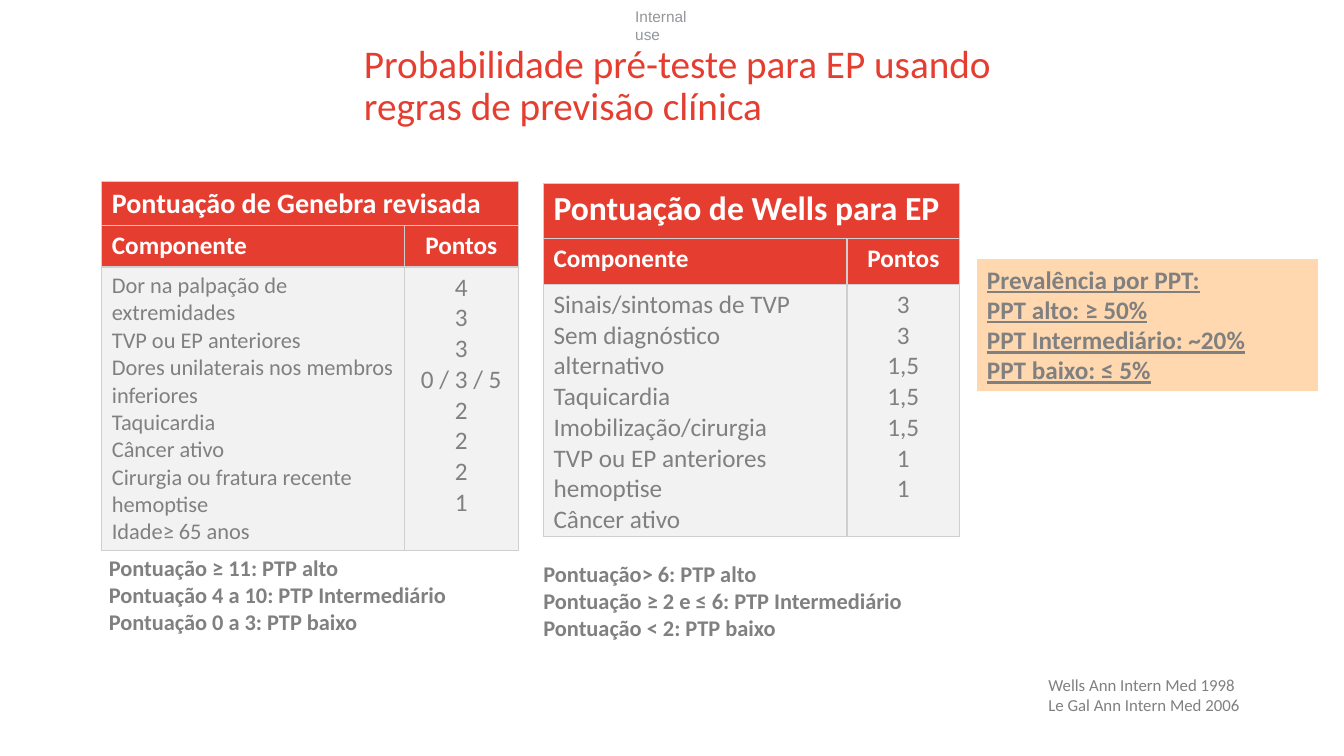
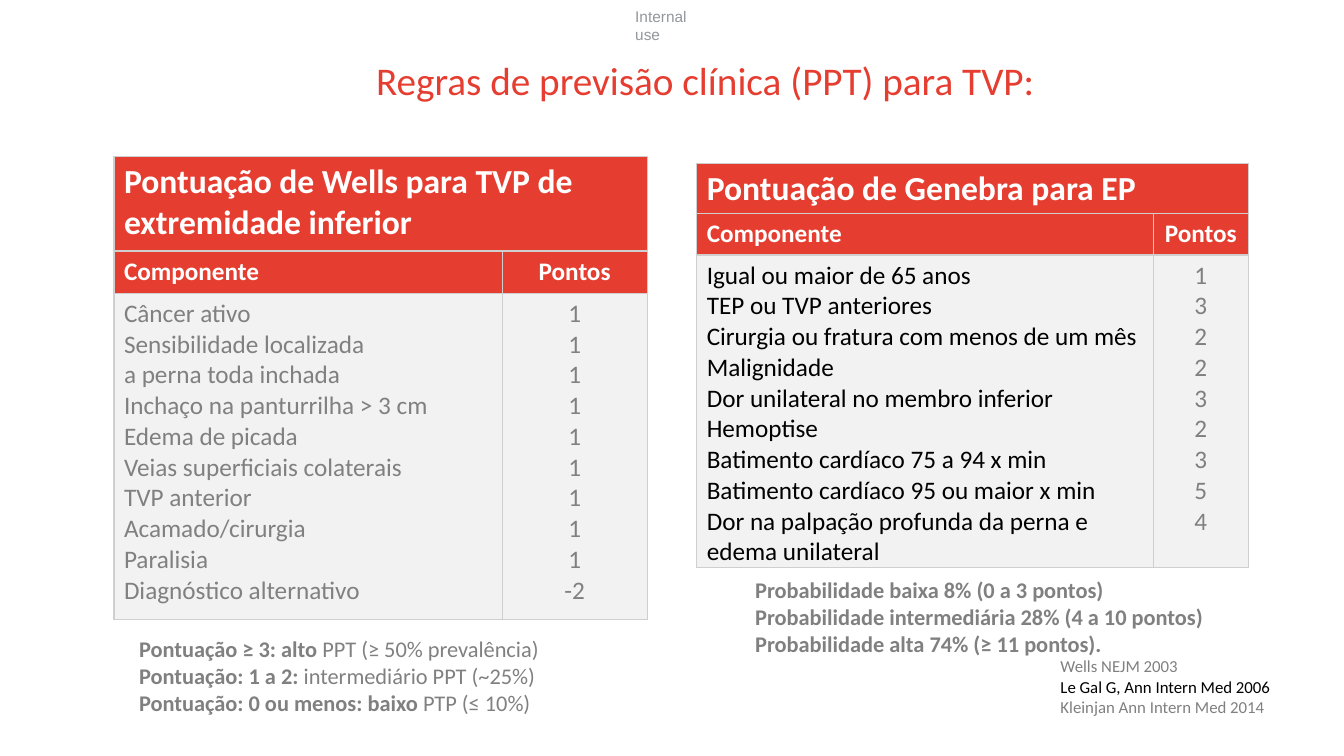
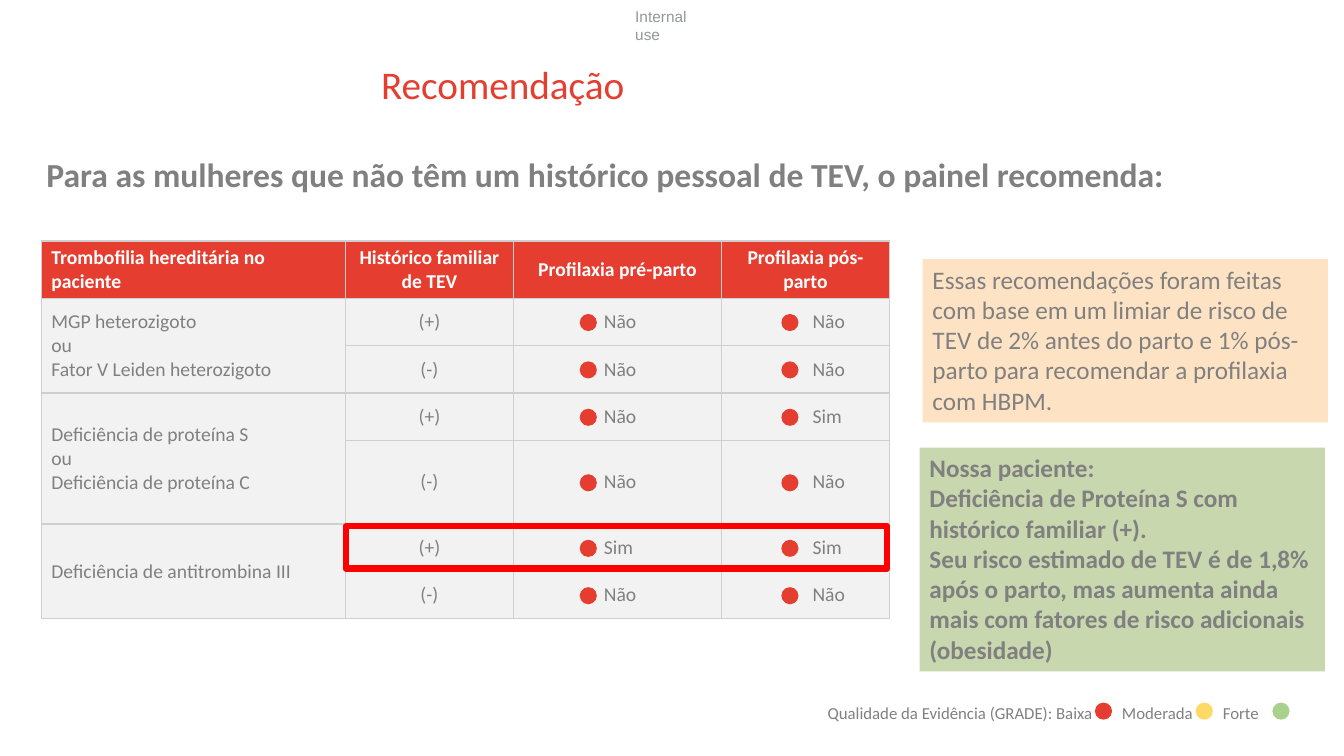
"""Builds three slides on clinical prediction rules and prophylaxis for venous thrombosis."""
from lxml.etree import SubElement
from pptx import Presentation
from pptx.dml.color import RGBColor as Rgb
from pptx.enum.shapes import MSO_SHAPE as Preset
from pptx.enum.text import MSO_ANCHOR as Anchor, PP_ALIGN as Align
from pptx.oxml.ns import qn
from pptx.util import Inches, Pt

COLORS = {
    "red": "E53E31", "frame": "FF0000", "gray": "808080", "label": "93979B",
    "white": "FFFFFF", "black": "000000", "cell": "F2F2F2", "border": "D0CECE",
    "orange": "FFD8B0", "peach": "FEE2C4", "sage": "C9D7AF",
    "yellow": "FFD966", "green": "A9D18E",
}
BASE_FONT = {"name": "Calibri", "size": 18, "bold": False, "color": "gray"}
HEADER = {"bold": True, "color": "white"}
NOTE = {"size": 16, "bold": True}
SOURCE = {"size": 12}
FLUSH = dict.fromkeys(("margin_left", "margin_top", "margin_right", "margin_bottom"), 0)
DOT = 0.17


def rgb(color):
    return Rgb.from_string(COLORS[color])


def style_span(span, formats):
    for key, value in {**BASE_FONT, **formats}.items():
        if key == "color":
            span.font.color.rgb = rgb(value)
        else:
            setattr(span.font, key, Pt(value) if key == "size" else value)


def write(frame, paras, formats, align=Align.LEFT, spacing=None):
    for index, spans in enumerate(paras):
        para = frame.add_paragraph() if index else frame.paragraphs[0]
        para.alignment = align
        if spacing:
            para.line_spacing = spacing
        for text, changes in [(spans, {})] if isinstance(spans, str) else spans:
            for number, line in enumerate(text.split("\n")):
                if number:
                    para.add_line_break()
                span = para.add_run()
                span.text = line
                style_span(span, {**formats, **changes})


def add_text(shapes, place, paras, formats, margins=None, spacing=None):
    box = shapes.add_textbox(*map(Inches, place))
    frame = box.text_frame
    for key, value in {"word_wrap": True, **(margins or {})}.items():
        setattr(frame, key, value)
    write(frame, paras, formats, spacing=spacing)
    return box


def add_panel(shapes, place, fill=None, preset=Preset.RECTANGLE, line=None):
    panel = shapes.add_shape(preset, *map(Inches, place))
    panel.shadow.inherit = False
    if fill:
        panel.fill.solid()
        panel.fill.fore_color.rgb = rgb(fill)
    else:
        panel.fill.background()
    if line:
        panel.line.color.rgb = rgb(line)
        panel.line.width = Pt(4.5)
    else:
        panel.line.fill.background()
    return panel


def add_callout(page, place, fill, paras, formats):
    frame = add_panel(page.shapes, place, fill).text_frame
    frame.word_wrap = True
    frame.vertical_anchor = Anchor.TOP
    write(frame, paras, formats)


def add_dot(shapes, left, top, color="red"):
    add_panel(shapes, (left, top, DOT, DOT), color, Preset.OVAL)


def add_page(deck, title, left, top, width):
    page = deck.slides.add_slide(deck.slide_layouts[6])
    add_text(page.shapes, (6.3, 0.07, 0.78, 0.18), ["Internal use"],
             {"name": "Arial", "size": 11, "color": "label"}, FLUSH)
    add_text(page.shapes, (left, top, width, 0.74), [title],
             {"size": 28, "color": "red"}, FLUSH, 0.9)
    return page


def add_grid(page, left, top, widths, heights):
    place = (left, top, sum(widths), sum(heights))
    table = page.shapes.add_table(len(heights), len(widths), *map(Inches, place)).table
    table.horz_banding = False
    for column, width in zip(table.columns, widths):
        column.width = Inches(width)
    for row, height in zip(table.rows, heights):
        row.height = Inches(height)
    for cell in table.iter_cells():
        for side in ("a:lnL", "a:lnR", "a:lnT", "a:lnB"):
            line = SubElement(cell._tc.get_or_add_tcPr(), qn(side), w=str(Pt(1)))
            fill = SubElement(line, qn("a:solidFill"))
            SubElement(fill, qn("a:srgbClr"), val=COLORS["border"])
    return table


def fill_cell(cell, paras, fill, formats, align=Align.LEFT, **layout):
    cell.fill.solid()
    cell.fill.fore_color.rgb = rgb(fill)
    for key, value in layout.items():
        setattr(cell, key, value)
    write(cell.text_frame, paras, formats, align)


def add_score(page, left, top, widths, heights, title, size, scores, formats):
    table = add_grid(page, left, top, widths, heights)
    table.cell(0, 0).merge(table.cell(0, 1))
    fill_cell(table.cell(0, 0), [title], "red", {**HEADER, "size": size})
    components, points = zip(*scores)
    for column, (heading, paras, align, changes) in enumerate((
            ("Componente", components, Align.LEFT, formats),
            ("Pontos", points, Align.CENTER, {}))):
        fill_cell(table.cell(1, column), [heading], "red", HEADER, align)
        fill_cell(table.cell(2, column), paras, "cell", changes, align)


def add_embolism_page(deck):
    page = add_page(deck, "Probabilidade pré-teste para EP usando\nregras de previsão clínica",
                    3.61, 0.44, 9.5)
    add_score(page, 5.39, 1.82, (3.01, 1.12), (0.55, 0.45, 2.41),
              "Pontuação de Wells para EP", 24, (
                  ("Sinais/sintomas de TVP", "3"),
                  ("Sem diagnóstico alternativo", "3"),
                  ("Taquicardia", "1,5"),
                  ("Imobilização/cirurgia", "1,5"),
                  ("TVP ou EP anteriores", "1,5"),
                  ("hemoptise", "1"),
                  ("Câncer ativo", "1")), {})
    add_score(page, 1.01, 1.8, (3, 1.13), (0.44, 0.41, 2.81),
              "Pontuação de Genebra revisada", 20, (
                  ("Dor na palpação de extremidades", "4"),
                  ("TVP ou EP anteriores", "3"),
                  ("Dores unilaterais nos membros inferiores", "3"),
                  ("Taquicardia", "0 / 3 / 5"),
                  ("Câncer ativo", "2"),
                  ("Cirurgia ou fratura recente", "2"),
                  ("hemoptise", "2"),
                  ("Idade≥ 65 anos", "1")), {"size": 16})
    add_callout(page, (9.69, 2.57, 3.38, 1.31), "orange",
                ["Prevalência por PPT:", "PPT alto: ≥ 50%",
                 "PPT Intermediário: ~20%", "PPT baixo: ≤ 5%"],
                {"bold": True, "underline": True})
    add_text(page.shapes, (10.3, 6.64, 2.77, 0.5),
             ["Wells Ann Intern Med 1998", "Le Gal Ann Intern Med 2006"], SOURCE)
    add_text(page.shapes, (5.39, 5.56, 4.38, 0.81),
             ["Pontuação> 6: PTP alto", "Pontuação ≥ 2 e ≤ 6: PTP Intermediário",
              "Pontuação < 2: PTP baixo"], NOTE, FLUSH)
    add_text(page.shapes, (1.08, 5.5, 4.1, 0.81),
             ["Pontuação ≥ 11: PTP alto", "Pontuação 4 a 10: PTP Intermediário",
              "Pontuação 0 a 3: PTP baixo"], NOTE, FLUSH)


def add_thrombosis_page(deck):
    page = add_page(deck, "Regras de previsão clínica (PPT) para TVP:", 3.73, 0.61, 9.5)
    add_text(page.shapes, (10.42, 6.46, 2.77, 0.71),
             ["Wells NEJM 2003", [("Le Gal G, Ann Intern Med 2006", {"color": "black"})],
              "Kleinjan Ann Intern Med 2014"], SOURCE)
    add_score(page, 6.91, 1.62, (4.53, 0.94), (0.5, 0.41, 3.1),
              "Pontuação de Genebra para EP", 24, (
                  ("Igual ou maior de 65 anos", "1"),
                  ("TEP ou TVP anteriores", "3"),
                  ("Cirurgia ou fratura com menos de um mês", "2"),
                  ("Malignidade", "2"),
                  ("Dor unilateral no membro inferior", "3"),
                  ("Hemoptise", "2"),
                  ("Batimento cardíaco 75 a 94 x min", "3"),
                  ("Batimento cardíaco 95 ou maior x min", "5"),
                  ("Dor na palpação profunda da perna e edema unilateral", "4")),
              {"color": "black"})
    add_score(page, 1.13, 1.55, (3.85, 1.44), (0.94, 0.42, 3.24),
              "Pontuação de Wells para TVP de extremidade inferior", 24, (
                  ("Câncer ativo", "1"),
                  ("Sensibilidade localizada", "1"),
                  ("a perna toda inchada", "1"),
                  ("Inchaço na panturrilha > 3 cm", "1"),
                  ("Edema de picada", "1"),
                  ("Veias superficiais colaterais", "1"),
                  ("TVP anterior", "1"),
                  ("Acamado/cirurgia", "1"),
                  ("Paralisia", "1"),
                  ("Diagnóstico alternativo", "-2")), {})
    plain = {"bold": False}
    add_text(page.shapes, (1.38, 6.3, 4.81, 0.81),
             [[("Pontuação ≥ 3: alto", {}), (" PPT (≥ 50% prevalência)", plain)],
              [("Pontuação: 1 a 2: ", {}), ("intermediário PPT (~25%)", plain)],
              [("Pontuação: 0 ou menos: baixo", {}), (" PTP (≤ 10%)", plain)]], NOTE, FLUSH)
    add_text(page.shapes, (7.49, 5.72, 5.23, 0.81),
             ["Probabilidade baixa 8% (0 a 3 pontos)",
              "Probabilidade intermediária 28% (4 a 10 pontos)",
              "Probabilidade alta 74% (≥ 11 pontos)."], NOTE, FLUSH)


def add_prophylaxis_table(page):
    left, top = 0.41, 2.39
    heights = (0.57, 0.47, 0.47, 0.47, 0.83, 0.47, 0.47)
    table = add_grid(page, left, top, (3.02, 1.66, 2.07, 1.66), heights)
    small = {"size": 14}
    middle = {"vertical_anchor": Anchor.MIDDLE}
    headings = ("Trombofilia hereditária no paciente", "Histórico familiar de TEV",
                "Profilaxia pré-parto", "Profilaxia pós-parto")
    for column, heading in enumerate(headings):
        fill_cell(table.cell(0, column), [heading], "red", {**HEADER, **small},
                  Align.CENTER if column else Align.LEFT, **middle)
    conditions = (["MGP heterozigoto", "ou", "Fator V Leiden heterozigoto"],
                  ["Deficiência de proteína S", "ou", "Deficiência de proteína C"],
                  ["Deficiência de antitrombina III"])
    for index, condition in enumerate(conditions):
        row = 1 + 2 * index
        table.cell(row, 0).merge(table.cell(row + 1, 0))
        fill_cell(table.cell(row, 0), condition, "cell", small, **middle)
    answers = (("Não", "Não"), ("Não", "Não"), ("Não", "Sim"),
               ("Não", "Não"), ("Sim", "Sim"), ("Não", "Não"))
    for row, pair in enumerate(answers, 1):
        history = "(+)" if row % 2 else "(-)"
        fill_cell(table.cell(row, 1), [history], "cell", small, Align.CENTER, **middle)
        for column, answer in enumerate(pair, 2):
            fill_cell(table.cell(row, column), [answer], "cell", small,
                      margin_left=Inches(0.9), **middle)
    add_panel(page.shapes, (3.43, 5.22, 5.37, 0.42), line="frame")
    for row in range(1, len(heights)):
        center = top + sum(heights[:row]) + heights[row] / 2
        for dot_left in (5.75, 7.75):
            add_dot(page.shapes, dot_left, center - 0.08)


def add_legend(page):
    shapes = page.shapes.add_group_shape().shapes
    box = add_text(shapes, (8.11, 6.92, 4.87, 0.3),
                   ["Qualidade da Evidência (GRADE): Baixa\tModerada\tForte"], SOURCE)
    properties = box.text_frame.paragraphs[0]._p.get_or_add_pPr()
    stops = SubElement(properties, qn("a:tabLst"))
    for position in (2.92, 3.92):
        SubElement(stops, qn("a:tab"), pos=str(Inches(position)), algn="l")
    for left, color in ((10.86, "red"), (11.86, "yellow"), (12.62, "green")):
        add_dot(shapes, left, 6.97, color)


def add_recommendation_page(deck):
    page = add_page(deck, "Recomendação", 3.78, 0.65, 5.09)
    add_prophylaxis_table(page)
    add_callout(page, (9.12, 4.44, 4.02, 2.22), "sage",
                ["Nossa paciente:",
                 "Deficiência de Proteína S com histórico familiar (+).",
                 "Seu risco estimado de TEV é de 1,8% após o parto, mas aumenta ainda "
                 "mais com fatores de risco adicionais (obesidade)"], {"bold": True})
    add_callout(page, (9.15, 2.57, 4.02, 1.62), "peach",
                ["Essas recomendações foram feitas com base em um limiar de risco de TEV "
                 "de 2% antes do parto e 1% pós-parto para recomendar a profilaxia com HBPM."],
                {})
    add_text(page.shapes, (0.46, 1.57, 12.14, 0.53),
             ["Para as mulheres que não têm um histórico pessoal de TEV, o painel recomenda:"],
             {"size": 24, "bold": True}, FLUSH, 0.9)
    add_legend(page)


def main():
    deck = Presentation()
    deck.slide_width, deck.slide_height = Inches(13.33), Inches(7.5)
    add_embolism_page(deck)
    add_thrombosis_page(deck)
    add_recommendation_page(deck)
    deck.save("out.pptx")


if __name__ == "__main__":
    main()
